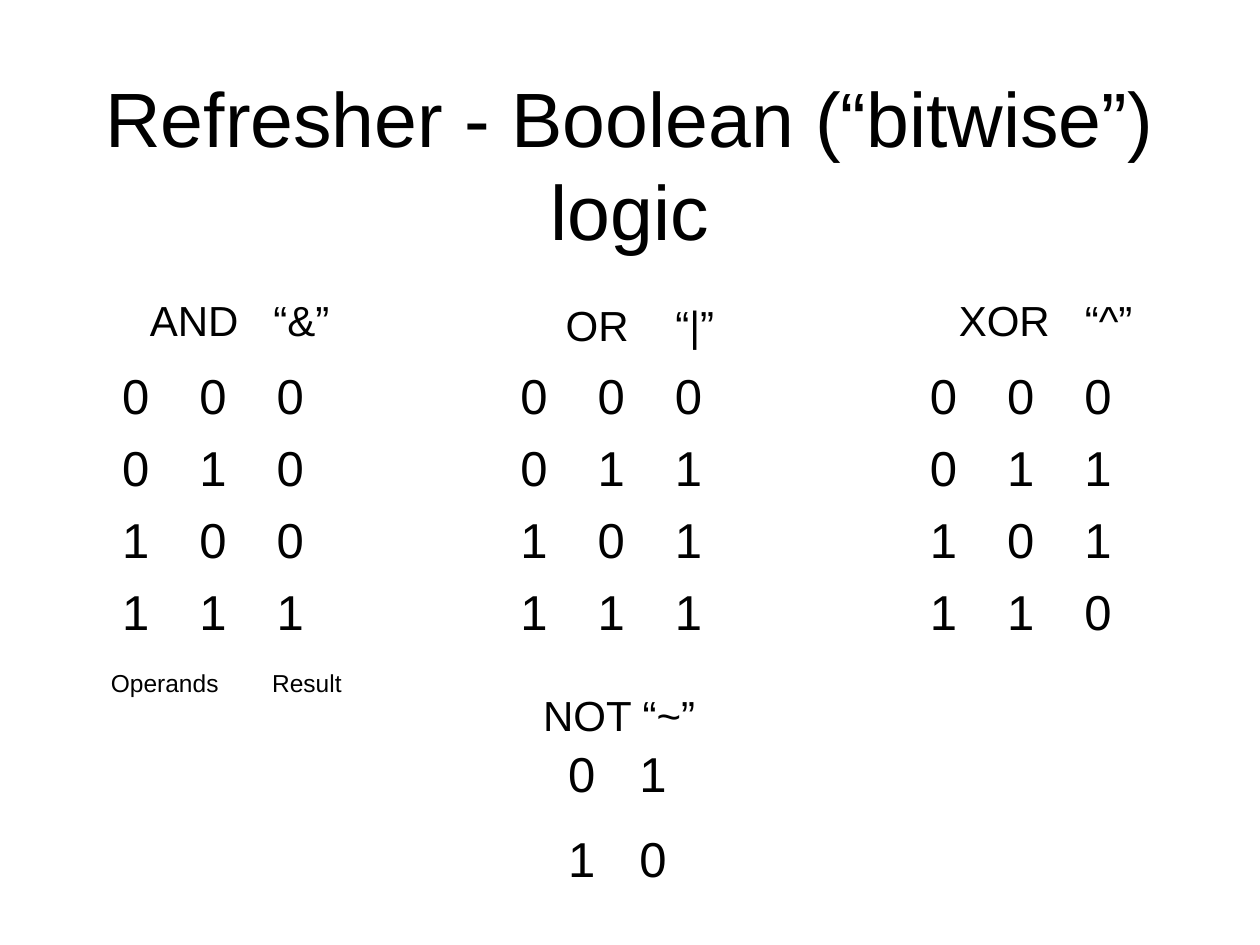
from itertools import product

from lxml.etree import SubElement
from pptx import Presentation
from pptx.dml.color import RGBColor
from pptx.enum.text import MSO_ANCHOR, MSO_AUTO_SIZE, PP_ALIGN
from pptx.oxml.ns import qn
from pptx.util import Inches, Pt

# The slide is a grid of 100 columns by 75 rows; boxes are (left, top, width, height)
CELL = Inches(10) // 100
BLACK = "000000"


def grid(*counts):
    return [round(count * CELL) for count in counts]


def color(hex_string):
    return RGBColor.from_string(hex_string)


def write(frame, text, size, align=None, before=None, spacing=None, tab=None):
    """Put one formatted paragraph in a text frame."""
    paragraph = frame.paragraphs[0]
    paragraph.alignment = align
    if before is not None:
        paragraph.space_before = Pt(before)
    if spacing is not None:
        paragraph.line_spacing = spacing
    if tab is not None:
        tabs = SubElement(paragraph._p.get_or_add_pPr(), qn("a:tabLst"))
        SubElement(tabs, qn("a:tab"), pos=str(grid(tab)[0]), algn="l")
    run = paragraph.add_run()
    run.text = text
    run.font.name = "Arial"
    run.font.size = Pt(size)
    run.font.color.rgb = color(BLACK)


def set_margins(target, margin):
    target.margin_left = target.margin_right = margin
    target.margin_top = target.margin_bottom = margin


def add_text(slide, box, text, size, margin=0.5, wrap=True,
             anchor=MSO_ANCHOR.TOP, **paragraph_format):
    frame = slide.shapes.add_textbox(*grid(*box)).text_frame
    frame.word_wrap = wrap
    frame.auto_size = MSO_AUTO_SIZE.SHAPE_TO_FIT_TEXT
    frame.vertical_anchor = anchor
    set_margins(frame, grid(margin)[0])
    write(frame, text, size, **paragraph_format)


def add_truth_table(slide, box, operation, operand_count):
    """List every combination of operands, followed by the result."""
    rows = [(*bits, operation(*bits)) for bits in product((0, 1), repeat=operand_count)]
    shape = slide.shapes.add_table(len(rows), operand_count + 1, *grid(*box))
    table = shape.table
    table.first_row = table.horz_banding = False
    for row_index, row in enumerate(rows):
        for column_index, bit in enumerate(row):
            cell = table.cell(row_index, column_index)
            cell.fill.background()
            set_margins(cell, grid(0.5)[0])
            write(cell.text_frame, str(bit), 28, before=7, spacing=0.93)


def add_operator(slide, heading_box, heading, table_box, operation,
                 operand_count=2, tab=None):
    add_truth_table(slide, table_box, operation, operand_count)
    add_text(slide, heading_box, heading, 24, wrap=False, tab=tab)


def add_legend(slide, box):
    left, top, width, height = box
    label_width = 11.4
    for label, label_left in (("Operands", left), ("Result", left + width - label_width)):
        add_text(slide, (label_left, top, label_width, height), label, 14, before=8)


def build_slide(presentation):
    slide = presentation.slides.add_slide(presentation.slide_layouts[6])

    # Title
    add_text(slide, (7.5, 5.6, 85, 14.7), "Refresher - Boolean (“bitwise”) logic", 44,
             margin=0, anchor=MSO_ANCHOR.MIDDLE, align=PP_ALIGN.CENTER)

    # Two-operand operators
    operators = [
        ("AND\t“&”", (11.4, 22.9, 15.4, 4.8), 9.2, 9.8, lambda a, b: a & b),
        ("OR\t“|”", (44.4, 23.3, 13, 4.8), 40.8, 8.7, lambda a, b: a | b),
        ("XOR\t“^”", (75.6, 22.9, 14.9, 4.8), 73.3, 10, lambda a, b: a ^ b),
    ]
    for heading, heading_box, table_left, tab, operation in operators:
        add_operator(slide, heading_box, heading, (table_left, 29.2, 18.4, 22.8),
                     operation, tab=tab)

    # One-operand operator
    add_operator(slide, (42.6, 54.2, 13.2, 4.8), "NOT “~”", (44.6, 59.2, 11.3, 13.4),
                 lambda a: 1 - a, operand_count=1)

    # Column labels under the first table
    add_legend(slide, (8.3, 52.5, 24.2, 3.2))


def main():
    presentation = Presentation()
    presentation.slide_width, presentation.slide_height = grid(100, 75)
    build_slide(presentation)
    presentation.save("out.pptx")


if __name__ == "__main__":
    main()
